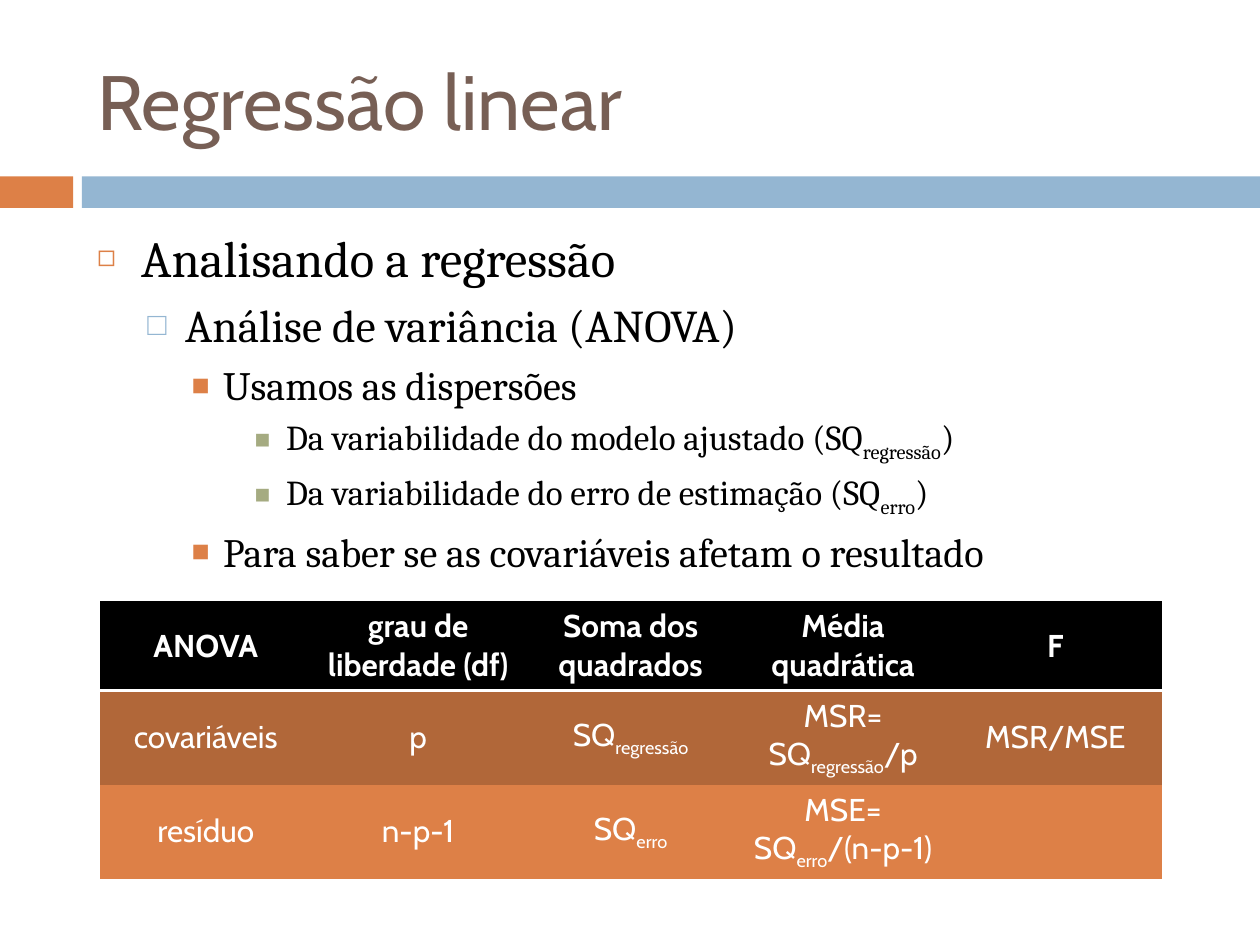
from dataclasses import dataclass

from lxml.etree import SubElement
from pptx import Presentation
from pptx.dml.color import RGBColor
from pptx.enum.shapes import MSO_SHAPE
from pptx.enum.text import MSO_ANCHOR, MSO_AUTO_SIZE, PP_ALIGN
from pptx.oxml import parse_xml
from pptx.oxml.ns import nsdecls, qn
from pptx.util import Inches, Pt

COLORS = {
    "orange": "DD8047",
    "rust": "B16739",
    "blue": "94B6D2",
    "green": "A5AB81",
    "brown": "775F55",
    "black": "000000",
    "white": "FFFFFF",
}
HEADING_FONT = "Cabin"
BODY_FONT = "Cambria"
NO_GRID_STYLE = "{2D5ABB26-0587-4C30-8999-92F81FD0307C}"
SUBSCRIPT_MARK = "~"


@dataclass(frozen=True)
class Level:
    margin: float
    hanging: float
    space_before: float
    bullet: str
    bullet_color: str
    bullet_percent: int
    size: int


@dataclass(frozen=True)
class Row:
    fill: str
    bold: bool
    cells: tuple[str, ...]


LEVELS = (
    Level(0.35, 0.35, 7, "◻", "orange", 60, 29),
    Level(0.7, 0.3, 5.5, "□", "blue", 70, 26),
    Level(1, 0.25, 5, "■", "orange", 75, 23),
    Level(1.5, 0.25, 4, "■", "green", 75, 20),
)

OUTLINE = (
    (0, "Analisando a regressão"),
    (1, "Análise de variância (ANOVA)"),
    (2, "Usamos as dispersões"),
    (3, "Da variabilidade do modelo ajustado (SQ~regressão~)"),
    (3, "Da variabilidade do erro de estimação (SQ~erro~)"),
    (2, "Para saber se as covariáveis afetam o resultado"),
)

ROWS = (
    Row("black", True, ("ANOVA", "grau de liberdade (df)", "Soma dos quadrados",
                        "Média quadrática", "F")),
    Row("rust", False, ("covariáveis", "p", "SQ~regressão~",
                        "MSR=\nSQ~regressão~/p", "MSR/MSE")),
    Row("orange", False, ("resíduo", "n-p-1", "SQ~erro~",
                          "MSE=\nSQ~erro~/(n-p-1)", "")),
)


def color(name: str) -> RGBColor:
    return RGBColor.from_string(COLORS[name])


def add_spans(paragraph, text: str, font: str, size: int, ink: str, bold: bool = False) -> None:
    for position, part in enumerate(text.split(SUBSCRIPT_MARK)):
        for line_number, line in enumerate(part.split("\n")):
            if line_number:
                paragraph.add_line_break()
            if not line:
                continue
            span = paragraph.add_run()
            span.text = line
            span.font.name = font
            span.font.size = Pt(size)
            span.font.bold = bold
            span.font.color.rgb = color(ink)
            if position % 2:
                span.font._element.set("baseline", "-25000")


def add_band(page, left: float, width: float, fill: str) -> None:
    band = page.shapes.add_shape(
        MSO_SHAPE.RECTANGLE, Inches(left), Inches(1.4), Inches(width), Inches(0.25))
    band.shadow.inherit = False
    band.fill.solid()
    band.fill.fore_color.rgb = color(fill)
    band.line.fill.background()


def place(box, left: float, top: float, width: float, height: float, anchor: MSO_ANCHOR) -> None:
    box.left, box.top = Inches(left), Inches(top)
    box.width, box.height = Inches(width), Inches(height)
    box.text_frame.word_wrap = True
    box.text_frame.auto_size = MSO_AUTO_SIZE.NONE
    box.text_frame.vertical_anchor = anchor


def set_bullet(paragraph, level: Level) -> None:
    properties = paragraph._p.get_or_add_pPr()
    properties.set("marL", str(Inches(level.margin)))
    properties.set("indent", str(-Inches(level.hanging)))
    bullet_color = SubElement(properties, qn("a:buClr"))
    SubElement(bullet_color, qn("a:srgbClr"), val=COLORS[level.bullet_color])
    SubElement(properties, qn("a:buSzPct"), val=str(level.bullet_percent * 1000))
    SubElement(properties, qn("a:buChar"), char=level.bullet)


def fill_title(box) -> None:
    place(box, 0.67, 0.25, 8.92, 1.08, MSO_ANCHOR.MIDDLE)
    paragraph = box.text_frame.paragraphs[0]
    paragraph.alignment = PP_ALIGN.LEFT
    add_spans(paragraph, "Regressão linear", HEADING_FONT, 44, "brown")


def fill_outline(box) -> None:
    place(box, 0.67, 1.75, 8.92, 5.23, MSO_ANCHOR.TOP)
    frame = box.text_frame
    for number, (depth, text) in enumerate(OUTLINE):
        paragraph = frame.add_paragraph() if number else frame.paragraphs[0]
        level = LEVELS[depth]
        paragraph.level = depth
        paragraph.space_before = Pt(level.space_before)
        set_bullet(paragraph, level)
        add_spans(paragraph, text, BODY_FONT, level.size, "black")


def add_bottom_border(cell, ink: str, points: float) -> None:
    border = parse_xml(
        f'<a:lnB {nsdecls("a")} w="{Pt(points)}"><a:solidFill>'
        f'<a:srgbClr val="{COLORS[ink]}"/></a:solidFill></a:lnB>')
    cell._tc.get_or_add_tcPr().insert(0, border)


def add_anova_table(page) -> None:
    frame = page.shapes.add_table(
        len(ROWS), len(ROWS[0].cells), Inches(0.79), Inches(4.77), Inches(8.43), Inches(2.1))
    table = frame.table
    table._tbl.tblPr.find(qn("a:tableStyleId")).text = NO_GRID_STYLE
    for row_number, row in enumerate(ROWS):
        for column_number, text in enumerate(row.cells):
            cell = table.cell(row_number, column_number)
            cell.fill.solid()
            cell.fill.fore_color.rgb = color(row.fill)
            cell.vertical_anchor = MSO_ANCHOR.MIDDLE
            paragraph = cell.text_frame.paragraphs[0]
            paragraph.alignment = PP_ALIGN.CENTER
            add_spans(paragraph, text, HEADING_FONT, 18, "white", row.bold)
            if row_number == 0:
                add_bottom_border(cell, "white", 2)


def main() -> None:
    deck = Presentation()
    deck.slide_width, deck.slide_height = Inches(10), Inches(7.5)
    page = deck.slides.add_slide(deck.slide_layouts[1])
    add_band(page, 0, 0.58, "orange")
    add_band(page, 0.65, 9.35, "blue")
    fill_title(page.shapes.title)
    fill_outline(page.placeholders[1])
    add_anova_table(page)
    deck.save("out.pptx")


if __name__ == "__main__":
    main()
